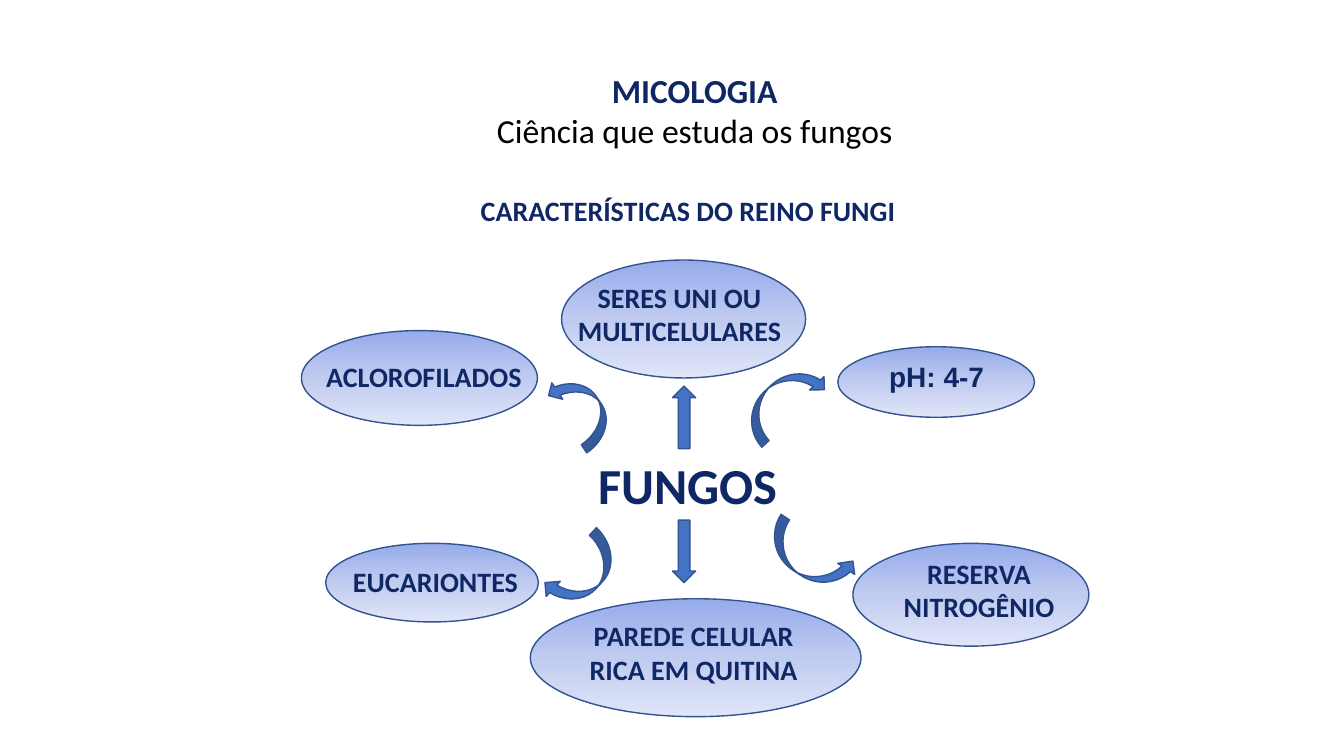
from copy import deepcopy

from pptx import Presentation
from pptx.dml.color import RGBColor
from pptx.enum.shapes import MSO_SHAPE
from pptx.enum.text import MSO_ANCHOR, MSO_AUTO_SIZE, PP_ALIGN
from pptx.oxml.ns import qn
from pptx.util import Inches, Pt


def rgb(value):
    return RGBColor.from_string(value)


class FungiSlide:
    NAVY = "102766"
    BLACK = "000000"
    ARROW = "4472C4"
    OUTLINE = "325491"
    GRADIENT = ((0, "96ABEA"), (0.5, "C0CBF0"), (1, "E0E5F7"))

    def __init__(self, prs):
        self.s = prs.slides.add_slide(prs.slide_layouts[5])

    def format(self, p, size, color=NAVY, bold=True, font="Calibri"):
        p.alignment = PP_ALIGN.CENTER
        p.font.name = font
        p.font.size = Pt(size)
        p.font.bold = bold
        p.font.color.rgb = rgb(color)

    def title(self, heading, subtitle, x, y, w, h):
        sp = self.s.shapes.title
        sp.left, sp.top, sp.width, sp.height = map(Inches, (x, y, w, h))
        tf = sp.text_frame
        tf.auto_size = MSO_AUTO_SIZE.NONE
        tf.vertical_anchor = MSO_ANCHOR.TOP
        tf.word_wrap = True
        tf.text = heading
        self.format(tf.paragraphs[0], 24)
        p = tf.add_paragraph()
        p.text = subtitle
        self.format(p, 24, self.BLACK, False)

    def text(self, text, x, y, w, h, size=20, font="Calibri"):
        tf = self.s.shapes.add_textbox(*map(Inches, (x, y, w, h))).text_frame
        tf.word_wrap = True
        tf.text = text
        self.format(tf.paragraphs[0], size, font=font)

    def shape(self, kind, x, y, w, h):
        sp = self.s.shapes.add_shape(kind, *map(Inches, (x, y, w, h)))
        sp.shadow.inherit = False
        sp.line.color.rgb = rgb(self.OUTLINE)
        sp.line.width = Pt(1)
        return sp

    def ellipse(self, x, y, w, h):
        sp = self.shape(MSO_SHAPE.OVAL, x, y, w, h)
        sp.fill.gradient()
        sp.fill.gradient_angle = 270
        stops = next(sp._element.spPr.iter(qn("a:gsLst")))
        stops.insert(1, deepcopy(stops[0]))
        for stop, (position, color) in zip(sp.fill.gradient_stops, self.GRADIENT):
            stop.position = position
            stop.color.rgb = rgb(color)

    def arrow(self, kind, x, y, w, h, rotation=0, flip=False):
        sp = self.shape(kind, x, y, w, h)
        sp.fill.solid()
        sp.fill.fore_color.rgb = rgb(self.ARROW)
        sp.rotation = rotation
        if flip:
            sp._element.spPr.find(qn("a:xfrm")).set("flipV", "1")


def main():
    prs = Presentation()
    prs.slide_width, prs.slide_height = Inches(13.33), Inches(7.5)
    slide = FungiSlide(prs)

    slide.title("MICOLOGIA", "Ciência que estuda os fungos", 4.74, 0.64, 4.3, 0.91)
    slide.text("FUNGOS", 5.73, 4.46, 2.19, 0.71, size=36)

    for box in (
        (8.31, 3.44, 1.95, 0.7),
        (8.46, 5.39, 2.34, 1.02),
        (5.26, 5.94, 3.28, 1.17),
        (3.23, 5.39, 2.11, 0.78),
        (2.99, 3.28, 2.34, 0.94),
        (5.57, 2.58, 2.42, 1.17),
    ):
        slide.ellipse(*box)

    slide.arrow(MSO_SHAPE.DOWN_ARROW, 6.67, 5.16, 0.23, 0.62)
    slide.arrow(MSO_SHAPE.UP_ARROW, 6.67, 3.83, 0.23, 0.62)
    slide.arrow(MSO_SHAPE.CURVED_RIGHT_ARROW, 5.57, 3.67, 0.39, 0.78, 146.3)
    slide.arrow(MSO_SHAPE.CURVED_LEFT_ARROW, 5.57, 5.26, 0.41, 0.85, 43.1)
    slide.arrow(MSO_SHAPE.CURVED_UP_ARROW, 7.56, 5.33, 0.95, 0.4, 33.1)
    slide.arrow(MSO_SHAPE.CURVED_UP_ARROW, 7.3, 3.78, 0.94, 0.39, 317.4, flip=True)

    slide.text("CARACTERÍSTICAS DO REINO FUNGI", 3.7, 1.87, 6.25, 0.44)
    slide.text("SERES UNI OU MULTICELULARES", 5.57, 2.73, 2.34, 0.77)
    slide.text("pH: 4-7", 8.39, 3.52, 1.8, 0.44, font="Arial")
    slide.text("ACLOROFILADOS", 3.07, 3.52, 2.27, 0.44)
    slide.text("RESERVA NITROGÊNIO", 8.54, 5.47, 2.34, 0.77)
    slide.text("PAREDE CELULAR RICA EM QUITINA", 5.49, 6.09, 2.78, 0.77)
    slide.text("EUCARIONTES", 3.15, 5.55, 2.34, 0.44)

    prs.save("out.pptx")


if __name__ == "__main__":
    main()
